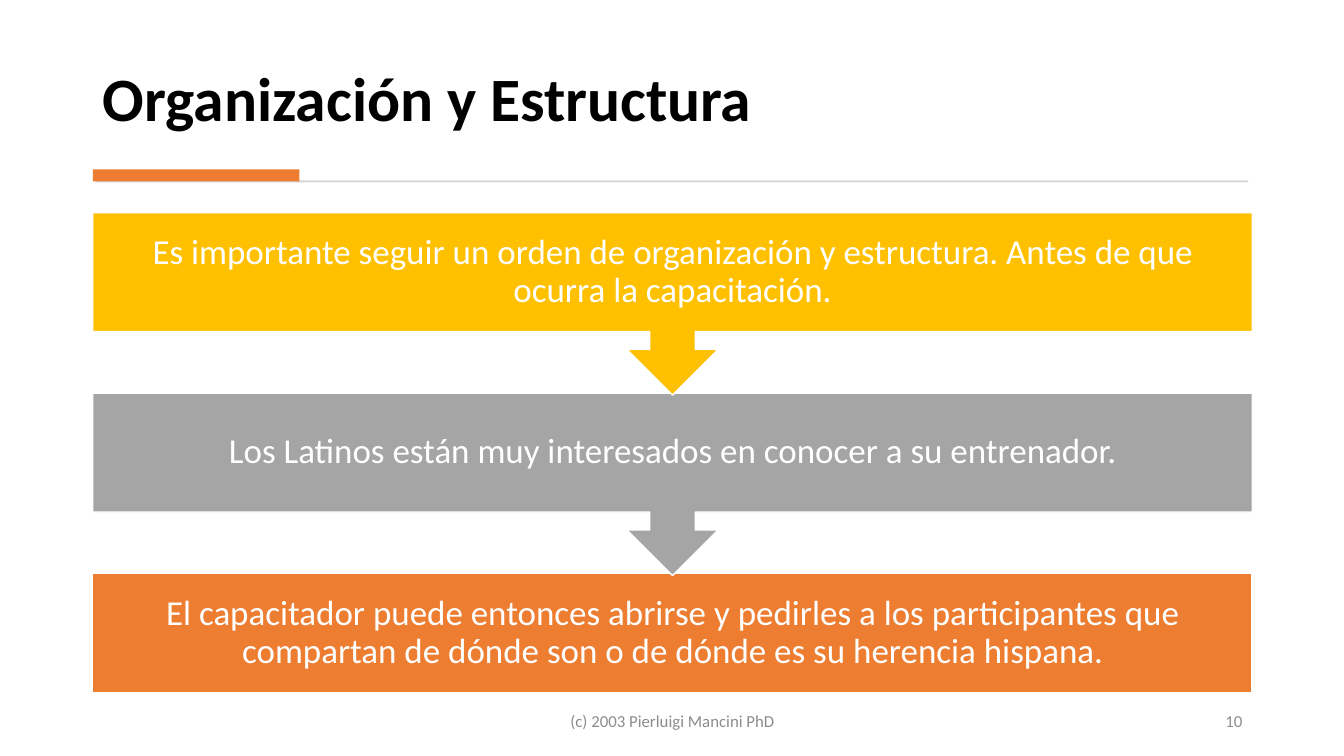
import pptx
import pptx.util
import pptx.dml.color
import pptx.enum.shapes
import pptx.enum.text

Inches = pptx.util.Inches
Pt = pptx.util.Pt
SHAPE = pptx.enum.shapes.MSO_SHAPE
ALIGN = pptx.enum.text.PP_ALIGN
ANCHOR = pptx.enum.text.MSO_ANCHOR

COLORS = {
    "title": "000000",
    "white": "FFFFFF",
    "rule": "D5D5D5",
    "orange": "ED7D31",
    "gray": "A5A5A5",
    "gold": "FFC000",
    "footer": "8C8C8C",
}

STEPS = [
    ("Es importante seguir un orden de organización y estructura. "
     "Antes de que ocurra la capacitación.", "gold"),
    ("Los Latinos están muy interesados en conocer a su entrenador.", "gray"),
    ("El capacitador puede entonces abrirse y pedirles a los participantes "
     "que compartan de dónde son o de dónde es su herencia hispana.", "orange"),
]
LEFT, WIDTH = 0.92, 11.5
STEP_TOP, STEP_PITCH = 2.11, 1.79
BOX_HEIGHT, CALLOUT_HEIGHT = 1.18, 1.81


def rgb(name):
    return pptx.dml.color.RGBColor.from_string(COLORS[name])


def write(shape, text, size, color, align, anchor=ANCHOR.MIDDLE, bold=False,
          spacing=1.0):
    frame = shape.text_frame
    frame.word_wrap = True
    frame.vertical_anchor = anchor
    paragraph = frame.paragraphs[0]
    paragraph.text = text
    paragraph.alignment = align
    paragraph.line_spacing = spacing
    font = paragraph.font
    font.name = "Calibri"
    font.size = Pt(size)
    font.bold = bold
    font.color.rgb = rgb(color)


def add_label(slide, box, *args, **style):
    write(slide.shapes.add_textbox(*map(Inches, box)), *args, **style)


def add_block(slide, kind, box, color):
    """Add a filled preset shape without outline or shadow."""
    block = slide.shapes.add_shape(kind, *map(Inches, box))
    block.shadow.inherit = False
    block.fill.solid()
    block.fill.fore_color.rgb = rgb(color)
    block.line.fill.background()
    return block


def add_step(slide, index, text, color):
    """Add one step; every step but the last points down to the next."""
    is_last = index == len(STEPS) - 1
    kind = SHAPE.RECTANGLE if is_last else SHAPE.DOWN_ARROW_CALLOUT
    height = BOX_HEIGHT if is_last else CALLOUT_HEIGHT
    top = STEP_TOP + index * STEP_PITCH
    step = add_block(slide, kind, (LEFT, top, WIDTH, height), color)
    if not is_last:
        step.adjustments[3] = BOX_HEIGHT / CALLOUT_HEIGHT
    step.line.color.rgb = rgb("white")
    step.line.width = Pt(1)
    frame = step.text_frame
    frame.margin_left = frame.margin_right = Inches(0.19)
    frame.margin_top = frame.margin_bottom = Inches(0.19)
    write(step, text, 25, "white", ALIGN.CENTER, spacing=0.9)


def main():
    deck = pptx.Presentation()
    deck.slide_width = Inches(13.33)
    deck.slide_height = Inches(7.5)
    slide = deck.slides.add_slide(deck.slide_layouts[6])

    add_label(slide, (LEFT, 0.28, 11.49, 1.11), "Organización y Estructura",
              44, "title", ALIGN.LEFT, anchor=ANCHOR.BOTTOM, bold=True,
              spacing=0.9)
    add_block(slide, SHAPE.RECTANGLE, (0.95, 1.79, 11.43, 0.02), "rule")
    add_block(slide, SHAPE.RECTANGLE, (LEFT, 1.68, 2.05, 0.12), "orange")

    # The last step goes to the back so that each arrow tip lies on top.
    for index, (text, color) in reversed(list(enumerate(STEPS))):
        add_step(slide, index, text, color)

    add_label(slide, (4.42, 6.95, 4.5, 0.4), "(c) 2003 Pierluigi Mancini PhD",
              12, "footer", ALIGN.CENTER)
    add_label(slide, (9.42, 6.95, 3, 0.4), "10", 12, "footer", ALIGN.RIGHT)

    deck.save("out.pptx")


if __name__ == "__main__":
    main()
